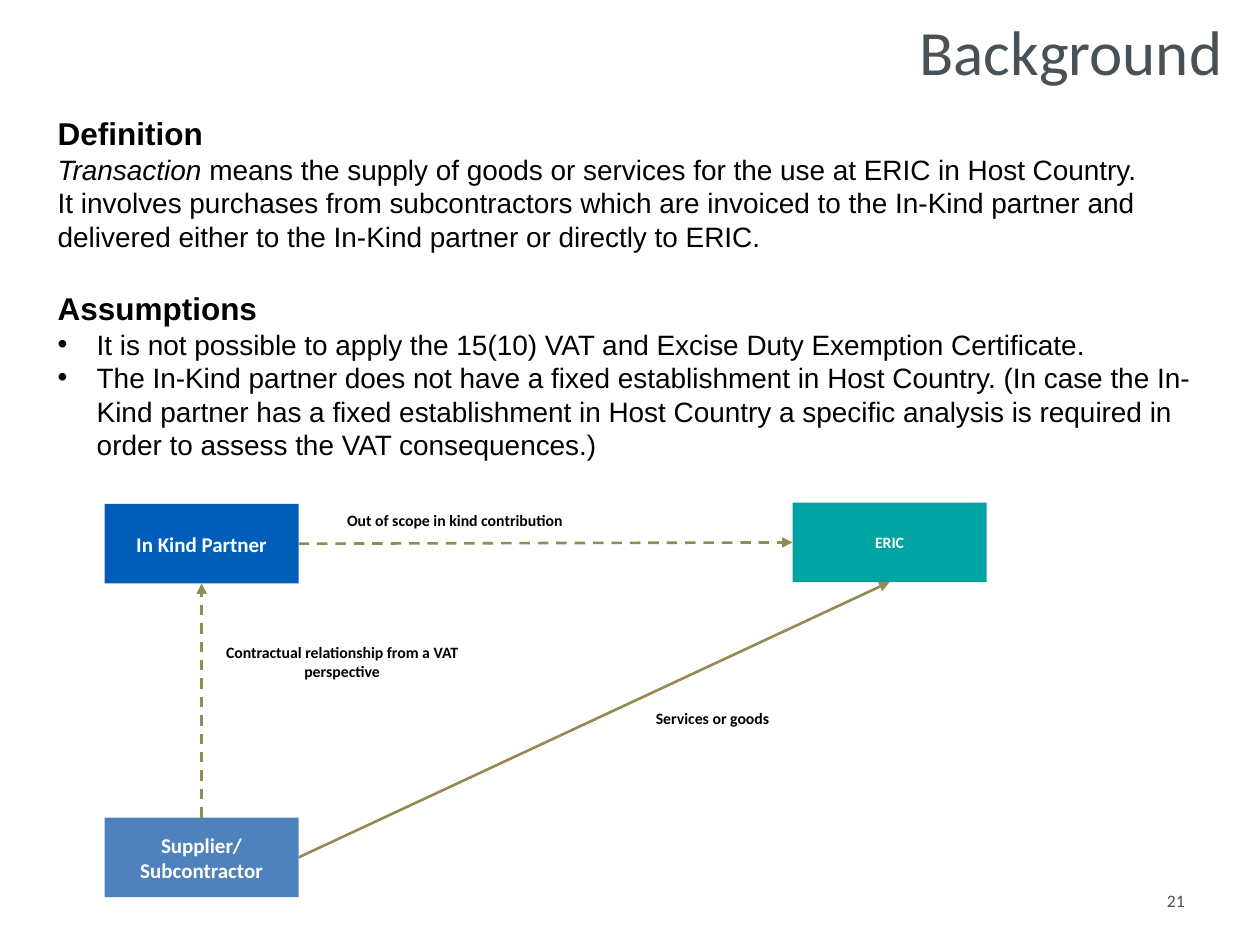
import pptx
import pptx.util
import pptx.dml.color
import pptx.enum.dml
import pptx.enum.shapes
import pptx.enum.text
import pptx.oxml
import pptx.oxml.ns
from dataclasses import dataclass

Inches, Pt = pptx.util.Inches, pptx.util.Pt
ALIGN = pptx.enum.text.PP_ALIGN
MIDDLE = pptx.enum.text.MSO_ANCHOR.MIDDLE
TOP, LEFT, BOTTOM, RIGHT = range(4)


@dataclass(frozen=True)
class Theme:
    grey: str = "485156"
    black: str = "000000"
    white: str = "FFFFFF"
    blue: str = "005EB8"
    steel: str = "4F81BD"
    teal: str = "00A3A1"
    olive: str = "948A54"
    sans: str = "Calibri"
    body: str = "Arial"
    title: int = 36
    head: int = 18
    text: int = 16
    node: int = 12
    page: int = 10
    note: int = 9


THEME = Theme()


def rgb(code):
    return pptx.dml.color.RGBColor.from_string(code)


def style(item, **values):
    for name, value in values.items():
        setattr(item, name, value)


def write(para, text, size, color, face=THEME.sans, **look):
    run = para.add_run()
    run.text = text
    style(run.font, size=Pt(size), name=face, **look)
    run.font.color.rgb = rgb(color)


def fill(frame, text, size, color, align=ALIGN.CENTER, pad=0.06, **look):
    """Put each line of text in its own paragraph, anchored to the middle."""
    pad = Inches(pad)
    style(frame, word_wrap=True, vertical_anchor=MIDDLE, margin_left=pad,
          margin_right=pad, margin_top=pad, margin_bottom=pad)
    for i, line in enumerate(text.split("\n")):
        para = frame.add_paragraph() if i else frame.paragraphs[0]
        para.alignment = align
        write(para, line, size, color, **look)


def label(slide, box, text, size, color, **look):
    shape = slide.shapes.add_textbox(*map(Inches, box))
    fill(shape.text_frame, text, size, color, **look)


def bullet(para):
    props = para._p.get_or_add_pPr()
    props.set("marL", str(Inches(0.31)))
    props.set("indent", str(-Inches(0.31)))
    for tag, key, value in (("buFont", "typeface", THEME.body),
                            ("buChar", "char", "•")):
        mark = pptx.oxml.parse_xml(
            f'<a:{tag} {pptx.oxml.ns.nsdecls("a")} {key}="{value}"/>')
        props.append(mark)


def prose(slide, box):
    frame = slide.shapes.add_textbox(*map(Inches, box)).text_frame
    frame.word_wrap = True
    head, text = dict(size=THEME.head, bold=True), dict(size=THEME.text)
    lines = [
        (False, [("Definition", head)]),
        (False, [("Transaction", dict(text, italic=True)),
                 (" means the supply of goods or services for the use at "
                  "ERIC in Host Country.", text)]),
        (False, [("It involves purchases from subcontractors which are "
                  "invoiced to the In-Kind partner and delivered either to "
                  "the In-Kind partner or directly to ERIC.", text)]),
        (False, [("Assumptions", head)]),
        (True, [("It is not possible to apply the 15(10) VAT and Excise "
                 "Duty Exemption Certificate.", text)]),
        (True, [("The In-Kind partner does not have a fixed establishment "
                 "in Host Country. (In case the In-Kind partner has a fixed "
                 "establishment in Host Country a specific analysis is "
                 "required in order to assess the VAT consequences.)", text)]),
    ]
    for i, (listed, runs) in enumerate(lines):
        para = frame.add_paragraph() if i else frame.paragraphs[0]
        if listed:
            bullet(para)
        elif i and runs[0][1] is head:
            para.space_before = Pt(20.7)
        for words, look in runs:
            write(para, words, color=THEME.black, face=THEME.body, **look)


def node(slide, box, text, color, size):
    shape = slide.shapes.add_shape(
        pptx.enum.shapes.MSO_SHAPE.RECTANGLE, *map(Inches, box))
    shape.shadow.inherit = False
    shape.fill.solid()
    shape.fill.fore_color.rgb = rgb(color)
    shape.line.fill.background()
    fill(shape.text_frame, text, size, THEME.white, bold=True)
    return shape


def arrow(slide, start, out, end, into, dashed):
    link = slide.shapes.add_connector(
        pptx.enum.shapes.MSO_CONNECTOR.STRAIGHT, 0, 0, 0, 0)
    link.begin_connect(start, out)
    link.end_connect(end, into)
    link.line.width = Pt(1.5)
    link.line.color.rgb = rgb(THEME.olive)
    if dashed:
        link.line.dash_style = pptx.enum.dml.MSO_LINE.DASH
    space = pptx.oxml.ns.nsdecls("a")
    link.line._get_or_add_ln().append(
        pptx.oxml.parse_xml(f'<a:tailEnd {space} type="triangle"/>'))
    link._element.spPr.append(pptx.oxml.parse_xml(f"<a:effectLst {space}/>"))


def diagram(slide, box):
    left, top, width, height = box
    wide, high = 1.54, 0.63
    far, low = left + width - wide, top + height - high
    partner = node(slide, (left, top + 0.01, wide, high),
                   "In Kind Partner", THEME.blue, THEME.node)
    vendor = node(slide, (left, low, wide, high),
                  "Supplier/\nSubcontractor", THEME.steel, THEME.node)
    eric = node(slide, (far, top, wide, high),
                "ERIC", THEME.teal, THEME.note)
    arrow(slide, vendor, TOP, partner, BOTTOM, True)
    arrow(slide, partner, RIGHT, eric, LEFT, True)
    arrow(slide, vendor, RIGHT, eric, BOTTOM, False)
    for x, y, w, text in (
            (0.8, 1.05, 2.17, "Contractual relationship from a VAT perspective"),
            (1.63, -0.07, 2.3, "Out of scope in kind contribution"),
            (3.74, 1.5, 2.17, "Services or goods")):
        label(slide, (left + x, top + y, w, 0.42), text,
              THEME.note, THEME.black, bold=True)


def main():
    deck = pptx.Presentation()
    style(deck, slide_width=Inches(10), slide_height=Inches(7.5))
    slide = deck.slides.add_slide(deck.slide_layouts[6])
    label(slide, (1.99, 0.04, 7.81, 0.72), "Background", THEME.title,
          THEME.grey, align=ALIGN.RIGHT, pad=0.1)
    prose(slide, (0.36, 0.86, 9.33, 3.16))
    diagram(slide, (0.83, 3.99, 7, 3.13))
    label(slide, (7.17, 6.95, 2.33, 0.4), "21", THEME.page,
          THEME.grey, align=ALIGN.RIGHT, pad=0.1)
    deck.save("out.pptx")


if __name__ == "__main__":
    main()
